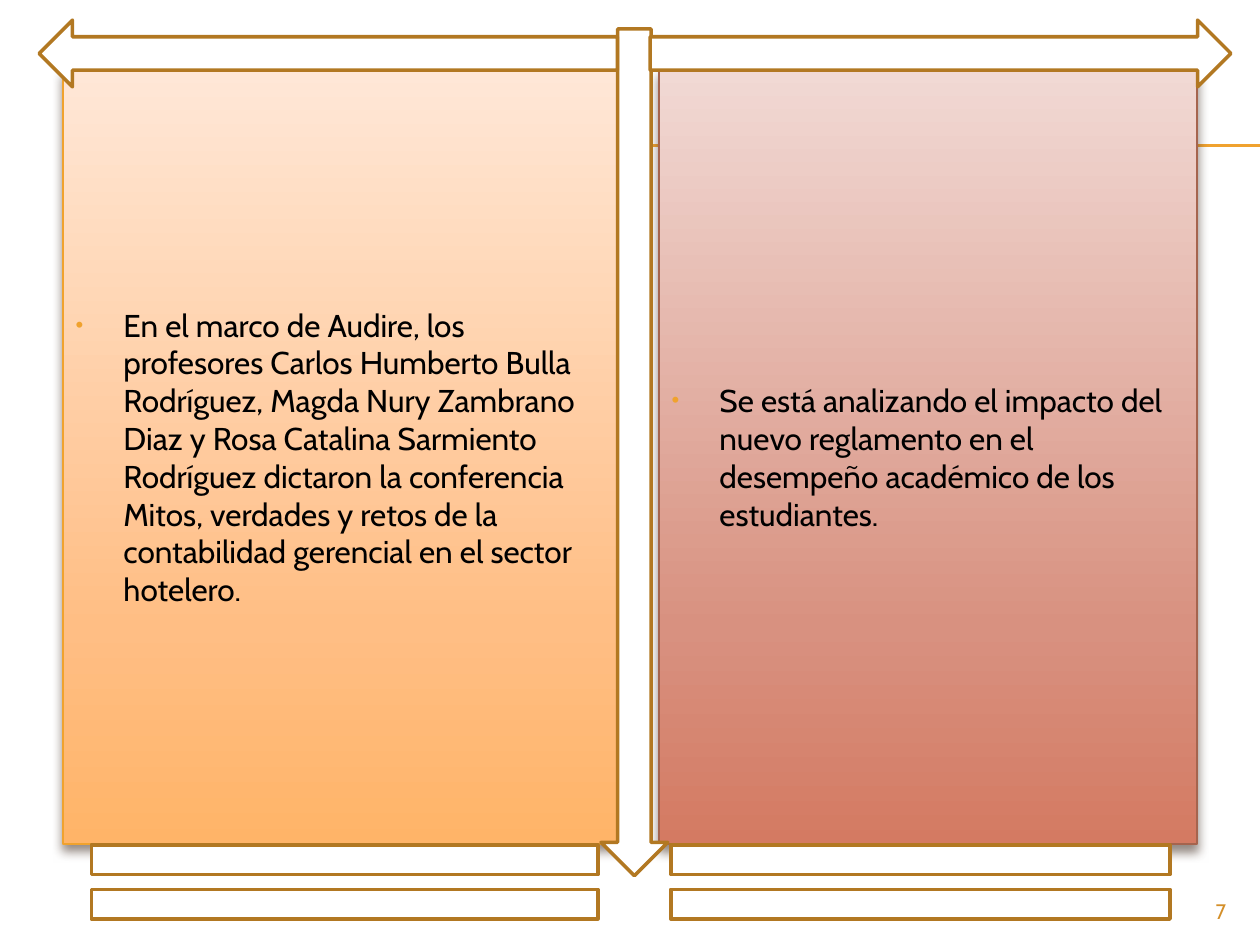
import copy

import pptx
import pptx.dml.color
import pptx.enum.shapes
import pptx.enum.text
import pptx.oxml
import pptx.oxml.ns
import pptx.util

Inches = pptx.util.Inches
Pt = pptx.util.Pt
RGBColor = pptx.dml.color.RGBColor
MSO_SHAPE = pptx.enum.shapes.MSO_SHAPE
qn = pptx.oxml.ns.qn

FONT = "Cabin"
BLACK = RGBColor(0x00, 0x00, 0x00)
WHITE = RGBColor(0xFF, 0xFF, 0xFF)
GOLD = RGBColor(0xF0, 0xA2, 0x2E)
BROWN = RGBColor(0xB2, 0x78, 0x22)
RUST = RGBColor(0xA5, 0x64, 0x4E)
OCHRE = RGBColor(0xD4, 0x8F, 0x29)
SHADE = RGBColor(0x4E, 0x3B, 0x30)
PEACH = [RGBColor(0xFF, 0xE7, 0xD7), RGBColor(0xFF, 0xBE, 0x84),
         RGBColor(0xFF, 0xB4, 0x68)]
CLAY = [RGBColor(0xF1, 0xD9, 0xD4), RGBColor(0xD8, 0x91, 0x80),
        RGBColor(0xD4, 0x7A, 0x62)]
STOPS = [0, 0.72, 1]

TALK = ("En el marco de Audire, los profesores Carlos Humberto Bulla Rodríguez, "
        "Magda Nury Zambrano Diaz y Rosa Catalina Sarmiento Rodríguez dictaron "
        "la conferencia Mitos, verdades y retos de la contabilidad gerencial "
        "en el sector hotelero.")
STUDY = ("Se está analizando el impacto del nuevo reglamento en el desempeño "
         "académico de los estudiantes.")


def parse(tag, attrs, inner=""):
    """Make one element of the drawing namespace."""
    space = pptx.oxml.ns.nsdecls("a")
    return pptx.oxml.parse_xml(f"<a:{tag} {space} {attrs}>{inner}</a:{tag}>")


def add_run(para, text, size, color):
    run = para.add_run()
    run.text = text
    run.font.name = FONT
    run.font.size = Pt(size)
    run.font.color.rgb = color


def shade(shape, colors):
    """Fill from top to bottom with three colours."""
    fill = shape.fill
    fill.gradient()
    fill.gradient_angle = 270
    stops = shape._element.spPr.find(qn("a:gradFill")).find(qn("a:gsLst"))
    stops.append(copy.deepcopy(stops[-1]))
    for stop, place, color in zip(fill.gradient_stops, STOPS, colors):
        stop.position = place
        stop.color.rgb = color


def drop_shadow(shape):
    tint = f'<a:srgbClr val="{SHADE}"><a:alpha val="60000"/></a:srgbClr>'
    outer = (f'<a:outerShdw blurRad="{Pt(6)}" dist="{Pt(4)}" dir="5400000" '
             f'rotWithShape="0">{tint}</a:outerShdw>')
    shape._element.spPr.append(parse("effectLst", "", outer))


def set_bullet(para):
    props = para._p.get_or_add_pPr()
    props.set("marL", str(Inches(0.38)))
    props.set("indent", str(-Inches(0.38)))
    for part in (
        parse("spcBef", "", '<a:spcPct val="20000"/>'),
        parse("buClr", "", f'<a:srgbClr val="{GOLD}"/>'),
        parse("buSzPct", 'val="70000"'),
        parse("buFont", 'typeface="Arial"'),
        parse("buChar", 'char="•"'),
    ):
        props.append(part)


def fill_panel(body, box, text, colors, edge):
    body.left, body.top, body.width, body.height = map(Inches, box)
    shade(body, colors)
    body.line.color.rgb = edge
    body.line.width = Pt(0.79)
    drop_shadow(body)
    frame = body.text_frame
    frame.word_wrap = True
    frame.auto_size = pptx.enum.text.MSO_AUTO_SIZE.NONE
    frame.vertical_anchor = pptx.enum.text.MSO_ANCHOR.MIDDLE
    para = frame.paragraphs[0]
    set_bullet(para)
    add_run(para, text, 18, BLACK)


def add_rule(slide, left, right, top):
    line = slide.shapes.add_connector(
        pptx.enum.shapes.MSO_CONNECTOR.STRAIGHT,
        Inches(left), Inches(top), Inches(right), Inches(top))
    line.line.color.rgb = GOLD
    line.line.width = Pt(0.75)
    line._element.spPr.append(parse("effectLst", ""))


def add_sign(slide, kind, box):
    sign = slide.shapes.add_shape(kind, *map(Inches, box))
    sign.shadow.inherit = False
    sign.fill.solid()
    sign.fill.fore_color.rgb = WHITE
    sign.line.color.rgb = BROWN
    sign.line.width = Pt(2)


def add_frame(slide):
    """Place the arrows and the equal signs around the panels."""
    add_sign(slide, MSO_SHAPE.DOWN_ARROW, (4.77, 0.23, 0.53, 6.72))
    add_sign(slide, MSO_SHAPE.RIGHT_ARROW, (5.16, 0.16, 4.61, 0.53))
    add_sign(slide, MSO_SHAPE.LEFT_ARROW, (0.31, 0.16, 4.59, 0.53))
    add_sign(slide, MSO_SHAPE.MATH_EQUAL, (0, 6.5, 5.47, 1))
    add_sign(slide, MSO_SHAPE.MATH_EQUAL, (4.61, 6.5, 5.39, 1))


def add_number(slide, box, text):
    note = slide.shapes.add_textbox(*map(Inches, box))
    note.text_frame.word_wrap = True
    para = note.text_frame.paragraphs[0]
    para.alignment = pptx.enum.text.PP_ALIGN.RIGHT
    add_run(para, text, 12, OCHRE)


def main():
    deck = pptx.Presentation()
    deck.slide_width, deck.slide_height = Inches(10), Inches(7.5)
    slide = deck.slides.add_slide(deck.slide_layouts[3])
    title, left, right = slide.placeholders
    tree = slide.shapes._spTree
    tree.remove(title._element)

    for top in (1.15, 1.16):
        add_rule(slide, 0.56, 10, top)
    for body in (left, right):
        tree.append(body._element)  # bring in front of the rules
    fill_panel(left, (0.5, 0.55, 4.42, 6.15), TALK, PEACH, GOLD)
    fill_panel(right, (5.23, 0.55, 4.27, 6.15), STUDY, CLAY, RUST)
    add_frame(slide)
    add_number(slide, (9, 7.08, 0.83, 0.27), "7")
    deck.save("out.pptx")


if __name__ == "__main__":
    main()
